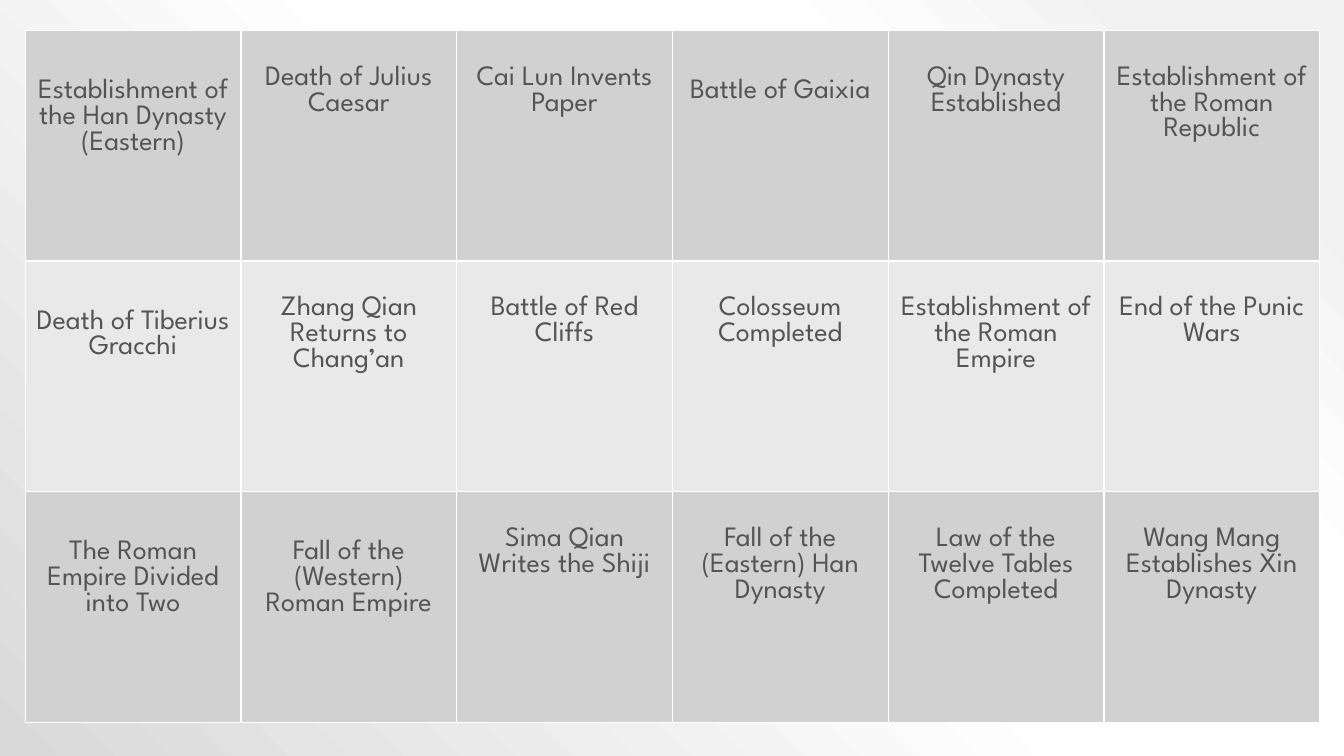
from dataclasses import dataclass

import pptx
import pptx.dml.color
import pptx.enum.text
import pptx.oxml
import pptx.oxml.ns
import pptx.util

Inches = pptx.util.Inches

FONT = "League Spartan"
INK = "545454"
WHITE = "FFFFFF"
BAND_FILLS = ("D1D1D1", "E9E9E9")
HIGH, LOW = 0.35, 0.48
COLUMN_WIDTH, ROW_HEIGHT = 2.14, 2.29
BACKGROUND_STOPS = ((10, "F2F2F2"), (28, WHITE), (48, WHITE), (100, "D9D9D9"))


@dataclass(frozen=True)
class Event:
    title: str
    drop: float = HIGH  # inches from the cell's top edge to the text


EVENTS = (
    (
        Event("Establishment of the Han Dynasty (Eastern)", LOW),
        Event("Death of Julius Caesar"),
        Event("Cai Lun Invents Paper"),
        Event("Battle of Gaixia", LOW),
        Event("Qin Dynasty Established"),
        Event("Establishment of the Roman Republic"),
    ),
    (
        Event("Death of Tiberius Gracchi", LOW),
        Event("Zhang Qian Returns to Chang’an"),
        Event("Battle of Red Cliffs"),
        Event("Colosseum Completed"),
        Event("Establishment of the Roman Empire"),
        Event("End of the Punic Wars"),
    ),
    (
        Event("The Roman Empire Divided into Two", LOW),
        Event("Fall of the (Western) Roman Empire", LOW),
        Event("Sima Qian Writes the Shiji"),
        Event("Fall of the (Eastern) Han Dynasty"),
        Event("Law of the Twelve Tables Completed"),
        Event("Wang Mang Establishes Xin Dynasty"),
    ),
)


def rgb(value: str) -> pptx.dml.color.RGBColor:
    return pptx.dml.color.RGBColor.from_string(value)


def write_text(frame, text: str, *, size: float, color: str, font: str = FONT,
               align=pptx.enum.text.PP_ALIGN.CENTER) -> None:
    paragraph = frame.paragraphs[0]
    paragraph.alignment = align
    run = paragraph.add_run()
    run.text = text
    run.font.name = font
    run.font.size = pptx.util.Pt(size)
    run.font.color.rgb = rgb(color)


def paint_background(slide) -> None:
    """Fill the slide with a radial gradient that starts at the top right."""
    slide.background.fill.solid()
    stops = "".join(
        f'<a:gs pos="{percent * 1000}"><a:srgbClr val="{color}"/></a:gs>'
        for percent, color in BACKGROUND_STOPS
    )
    gradient = pptx.oxml.parse_xml(
        f'<a:gradFill {pptx.oxml.ns.nsdecls("a")} rotWithShape="1">'
        f'<a:gsLst>{stops}</a:gsLst><a:path path="circle">'
        '<a:fillToRect l="100000" b="100000"/></a:path></a:gradFill>'
    )
    solid = slide.background._cSld.find(".//" + pptx.oxml.ns.qn("a:solidFill"))
    solid.getparent().replace(solid, gradient)


def add_borders(cell, color: str, points: float) -> None:
    properties = cell._tc.get_or_add_tcPr()
    for position, side in enumerate(("lnL", "lnR", "lnT", "lnB")):
        properties.insert(position, pptx.oxml.parse_xml(
            f'<a:{side} {pptx.oxml.ns.nsdecls("a")} w="{int(pptx.util.Pt(points))}">'
            f'<a:solidFill><a:srgbClr val="{color}"/></a:solidFill></a:{side}>'
        ))


def fill_cell(cell, event: Event, fill: str) -> None:
    cell.vertical_anchor = pptx.enum.text.MSO_ANCHOR.TOP
    cell.margin_top = Inches(event.drop)
    cell.fill.solid()
    cell.fill.fore_color.rgb = rgb(fill)
    add_borders(cell, WHITE, 1)
    write_text(cell.text_frame, event.title, size=20, color=INK)


def add_event_table(slide) -> None:
    row_count, column_count = len(EVENTS), len(EVENTS[0])
    table = slide.shapes.add_table(
        row_count, column_count, Inches(0.25), Inches(0.3),
        Inches(COLUMN_WIDTH * column_count), Inches(ROW_HEIGHT * row_count),
    ).table
    table.first_row = False
    table.horz_banding = False
    for column in table.columns:
        column.width = Inches(COLUMN_WIDTH)
    for row_index, events in enumerate(EVENTS):
        table.rows[row_index].height = Inches(ROW_HEIGHT)
        for column_index, event in enumerate(events):
            fill_cell(table.cell(row_index, column_index), event,
                      BAND_FILLS[row_index % len(BAND_FILLS)])


def main() -> None:
    deck = pptx.Presentation()
    deck.slide_width, deck.slide_height = Inches(13.33), Inches(7.5)
    slide = deck.slides.add_slide(deck.slide_layouts[6])
    paint_background(slide)
    add_event_table(slide)
    deck.save("out.pptx")


if __name__ == "__main__":
    main()
